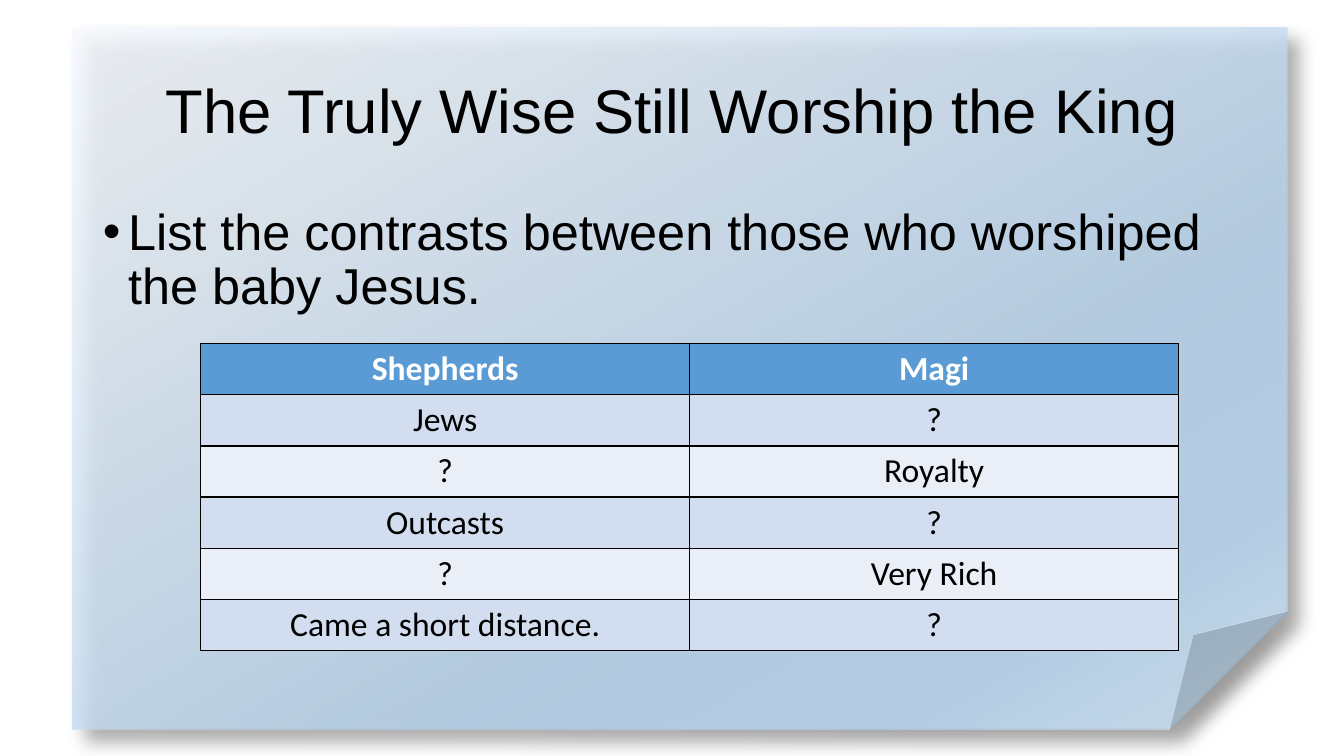
"""Build a slide contrasting the shepherds and the Magi on a folded card."""
from dataclasses import dataclass

from lxml.etree import SubElement
from pptx import Presentation
from pptx.dml.color import RGBColor
from pptx.enum.shapes import MSO_SHAPE
from pptx.enum.text import MSO_ANCHOR, MSO_AUTO_SIZE, PP_ALIGN as Align
from pptx.oxml.ns import qn
from pptx.util import Inches, Pt


@dataclass(frozen=True)
class Theme:
    heading_font: str = "Arial"
    table_font: str = "Calibri"
    title_size: int = 44
    body_size: int = 36
    table_size: int = 24
    ink: str = "000000"
    header_ink: str = "FFFFFF"
    header_fill: str = "5B9BD5"
    band_fills: tuple[str, str] = ("D2DEEF", "EAEFF7")
    border_width: int = 1


@dataclass(frozen=True)
class GradientStop:
    position: int
    color: str
    opacity: int


@dataclass(frozen=True)
class Box:
    left: float
    top: float
    width: float
    height: float

    def lengths(self) -> tuple:
        return tuple(Inches(n) for n in (self.left, self.top, self.width, self.height))


@dataclass(frozen=True)
class Contrast:
    shepherds: str
    magi: str


THEME = Theme()
CARD_BOX = Box(0.72, 0.27, 12.05, 6.97)
TITLE_BOX = Box(0.92, 0.4, 11.5, 1.45)
BODY_BOX = Box(0.92, 2, 11.5, 4.76)
TABLE_BOX = Box(1.99, 3.41, 9.7, 3)
CARD_STOPS = (
    GradientStop(0, "F7FAFD", 82),
    GradientStop(64, "B5D2EC", 80),
    GradientStop(83, "B5D2EC", 88),
    GradientStop(100, "CEE1F2", 89),
)
CONTRASTS = (
    Contrast("Shepherds", "Magi"),
    Contrast("Jews", "?"),
    Contrast("?", "Royalty"),
    Contrast("Outcasts", "?"),
    Contrast("?", "Very Rich"),
    Contrast("Came a short distance.", "?"),
)


def add_child(parent, tag: str, **attributes):
    return SubElement(parent, qn(tag), {name: str(value) for name, value in attributes.items()})


def add_color(parent, color: str, opacity: int = 100) -> None:
    element = add_child(parent, "a:srgbClr", val=color)
    if opacity < 100:
        add_child(element, "a:alpha", val=opacity * 1000)


def write_text(frame, text: str, *, font: str, size: int, color: str, bold: bool = False,
               align: Align = Align.LEFT, line_spacing: float = 1.0, bullet: str = ""):
    frame.text = text
    paragraph = frame.paragraphs[0]
    if bullet:
        indent = Inches(0.25)
        properties = paragraph._p.get_or_add_pPr()
        properties.set("marL", str(indent))
        properties.set("indent", str(-indent))
        add_child(properties, "a:buFont", typeface=font)
        add_child(properties, "a:buChar", char=bullet)
    paragraph.alignment = align
    paragraph.line_spacing = line_spacing
    paragraph.space_before = Pt(0)
    run_font = paragraph.runs[0].font
    run_font.name = font
    run_font.size = Pt(size)
    run_font.bold = bold
    run_font.color.rgb = RGBColor.from_string(color)


def place(shape, box: Box, anchor: MSO_ANCHOR):
    shape.left, shape.top, shape.width, shape.height = box.lengths()
    frame = shape.text_frame
    frame.word_wrap = True
    frame.auto_size = MSO_AUTO_SIZE.NONE
    frame.vertical_anchor = anchor
    return frame


def add_card(slide) -> None:
    card = slide.shapes.add_shape(MSO_SHAPE.FOLDED_CORNER, *CARD_BOX.lengths())
    card.line.fill.background()
    card.shadow.inherit = False
    properties = card.element.spPr
    gradient = add_child(properties, "a:gradFill", rotWithShape=1)
    stops = add_child(gradient, "a:gsLst")
    for stop in CARD_STOPS:
        add_color(add_child(stops, "a:gs", pos=stop.position * 1000), stop.color, stop.opacity)
    add_child(gradient, "a:lin", ang=60 * 60000, scaled=0)
    properties.find(qn("a:ln")).addprevious(gradient)
    shadow = add_child(properties.find(qn("a:effectLst")), "a:outerShdw", blurRad=Pt(13),
                       dist=Pt(13), dir=45 * 60000, algn="tl", rotWithShape=0)
    add_color(shadow, THEME.ink, 40)
    slide.shapes.title.element.addprevious(card.element)


def format_cell(cell, text: str, row: int) -> None:
    header = row == 0
    properties = cell._tc.get_or_add_tcPr()
    for side in ("a:lnL", "a:lnR", "a:lnT", "a:lnB"):
        border = add_child(properties, side, w=Pt(THEME.border_width))
        add_color(add_child(border, "a:solidFill"), THEME.ink)
    cell.fill.solid()
    fill = THEME.header_fill if header else THEME.band_fills[(row - 1) % 2]
    cell.fill.fore_color.rgb = RGBColor.from_string(fill)
    write_text(cell.text_frame, text, font=THEME.table_font, size=THEME.table_size,
               color=THEME.header_ink if header else THEME.ink, bold=header, align=Align.CENTER)


def add_contrast_table(slide) -> None:
    table = slide.shapes.add_table(len(CONTRASTS), 2, *TABLE_BOX.lengths()).table
    for row, contrast in enumerate(CONTRASTS):
        for column, text in enumerate((contrast.shepherds, contrast.magi)):
            format_cell(table.cell(row, column), text, row)


def main() -> None:
    presentation = Presentation()
    presentation.slide_width = Inches(13.33)
    presentation.slide_height = Inches(7.5)
    slide = presentation.slides.add_slide(presentation.slide_layouts[1])
    add_card(slide)
    write_text(place(slide.shapes.title, TITLE_BOX, MSO_ANCHOR.MIDDLE),
               "The Truly Wise Still Worship the King", font=THEME.heading_font,
               size=THEME.title_size, color=THEME.ink, align=Align.CENTER, line_spacing=0.9)
    write_text(place(slide.placeholders[1], BODY_BOX, MSO_ANCHOR.TOP),
               "List the contrasts between those who worshiped the baby Jesus.",
               font=THEME.heading_font, size=THEME.body_size, color=THEME.ink,
               line_spacing=0.9, bullet="•")
    add_contrast_table(slide)
    presentation.save("out.pptx")


if __name__ == "__main__":
    main()
